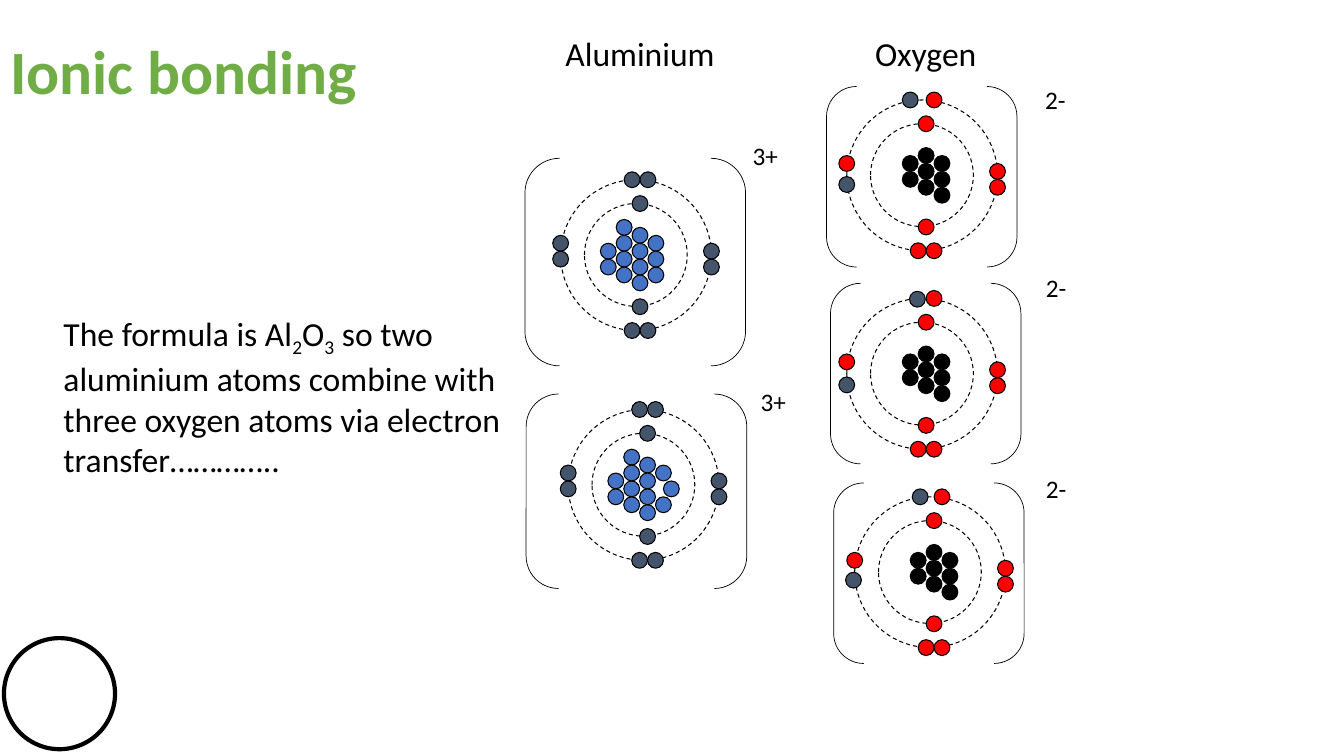
from lxml.etree import SubElement
from pptx import Presentation
from pptx.dml.color import RGBColor
from pptx.enum.dml import MSO_LINE
from pptx.enum.shapes import MSO_SHAPE as SHAPE
from pptx.enum.text import MSO_ANCHOR as ANCHOR, MSO_AUTO_SIZE as AUTO, PP_ALIGN as ALIGN
from pptx.util import Cm, Pt

COLORS = {"black": "000000", "white": "FFFFFF", "title": "70AD47", "red": "FF0000",
          "blue": "4472C4", "slate": "44546A"}
FONT = "Calibri"
DOT, STEP = 0.4, 0.2
SHELLS = [(0.6, 2.59), (0, 3.8)]

AL_NUCLEUS = [(5, 8), (5, 10), (7, 5), (7, 7), (7, 9), (7, 11), (9, 6), (9, 8),
              (9, 10), (9, 12), (11, 7), (11, 11)]
AL_ELECTRONS = [(9, 2), (9, 15), (8, -1), (10, -1), (8, 18), (10, 18),
                (18, 8), (18, 10), (-1, 7), (-1, 9)]
O_NUCLEUS = [(7, 7), (7, 9), (9, 6), (9, 8), (9, 10), (11, 7), (11, 9), (11, 11)]
O_ELECTRONS = [(9, 2), (9, 15), (10, -1), (8, 18), (10, 18), (18, 8), (18, 10), (-1, 7)]

ALUMINIUM = [
    ((14.13, 4.53), (11, 9), (13.23, 3.99, 5.56, 5.23), (18.72, 3.4)),
    ((14.32, 10.32), (12, 9), (13.26, 9.93, 5.56, 4.9), (18.92, 9.6)),
]
OXYGEN = [
    ((21.34, 2.52), [(7, -1), (-1, 9.65)], (20.83, 2.18), (26.09, 2.01)),
    ((21.34, 7.52), [(7.9, -0.9), (-1, 9.9)], (20.93, 7.14), (26.11, 6.73)),
    ((21.54, 12.52), [(7.25, -1), (-1.15, 9.5)], (21.01, 12.17), (26.11, 11.81)),
]


class IonSlide:
    """Holds the slide and draws its styled elements, with lengths in centimetres."""

    def __init__(self, prs):
        self.s = prs.slides.add_slide(prs.slide_layouts[5])

    def color(self, name):
        return RGBColor.from_string(COLORS[name])

    def style(self, font, size, color="black", bold=False):
        font.name, font.size, font.bold = FONT, Pt(size), bold
        font.color.rgb = self.color(color)

    def shape(self, kind, x, y, w, h, fill=None, line=0.75, dash=None):
        sp = self.s.shapes.add_shape(kind, Cm(x), Cm(y), Cm(w), Cm(h))
        sp.shadow.inherit = False
        if fill:
            sp.fill.solid()
            sp.fill.fore_color.rgb = self.color(fill)
        else:
            sp.fill.background()
        sp.line.color.rgb = self.color("black")
        sp.line.width = Pt(line)
        if dash:
            sp.line.dash_style = dash

    def title(self, text, x, y, w, h):
        sp = self.s.shapes.title
        sp.left, sp.top, sp.width, sp.height = Cm(x), Cm(y), Cm(w), Cm(h)
        tf = sp.text_frame
        tf.text, tf.vertical_anchor, tf.auto_size = text, ANCHOR.MIDDLE, AUTO.NONE
        p = tf.paragraphs[0]
        p.alignment, p.line_spacing = ALIGN.LEFT, 0.9
        self.style(p.font, 44, "title", True)

    def text(self, parts, x, y, w, h, size=24, align=ALIGN.LEFT):
        tf = self.s.shapes.add_textbox(Cm(x), Cm(y), Cm(w), Cm(h)).text_frame
        tf.word_wrap = True
        p = tf.paragraphs[0]
        p.alignment = align
        for i, part in enumerate(parts):
            r = p.add_run()
            r.text = part
            if i % 2:
                r._r.get_or_add_rPr().set("baseline", "-25000")
        self.style(p.font, size)

    def dots(self, origin, cells, color):
        for col, row in cells:
            self.shape(SHAPE.OVAL, origin[0] + col * STEP, origin[1] + row * STEP,
                       DOT, DOT, color)

    def ion(self, origin, nucleus, electrons, bracket, charge, charge_at):
        x, y = origin
        for inset, size in SHELLS:
            self.shape(SHAPE.OVAL, x + inset, y + inset, size, size, dash=MSO_LINE.DASH)
        for color, cells in (nucleus, *electrons):
            self.dots(origin, cells, color)
        self.shape(SHAPE.DOUBLE_BRACKET, *bracket, line=0.5)
        self.text([charge], *charge_at, 1.17, 1.02, 18)


def main():
    prs = Presentation()
    prs.slide_width, prs.slide_height = Cm(33.87), Cm(19.05)
    s = IonSlide(prs)
    s.shape(SHAPE.OVAL, 0.1, 16.08, 2.8, 2.8, "white", 3)
    s.title("Ionic bonding", 0, 0.03, 11.61, 3.68)
    s.text(["The formula is Al", "2", "O", "3", " so two aluminium atoms combine with "
            "three oxygen atoms via electron transfer………….."], 1.35, 7.75, 13.13, 4.37)
    s.text(["Aluminium"], 13.13, 0.71, 6, 1.27, align=ALIGN.CENTER)
    s.text(["Oxygen"], 20.93, 0.71, 4.8, 1.27, align=ALIGN.CENTER)
    for origin, last, bracket, charge_at in ALUMINIUM:
        s.ion(origin, ("blue", AL_NUCLEUS + [last]), [("slate", AL_ELECTRONS)],
              bracket, "3+", charge_at)
    for origin, gained, corner, charge_at in OXYGEN:
        s.ion(origin, ("black", O_NUCLEUS), [("red", O_ELECTRONS), ("slate", gained)],
              (*corner, 4.8, 4.55), "2-", charge_at)
    prs.save("out.pptx")


if __name__ == "__main__":
    main()
